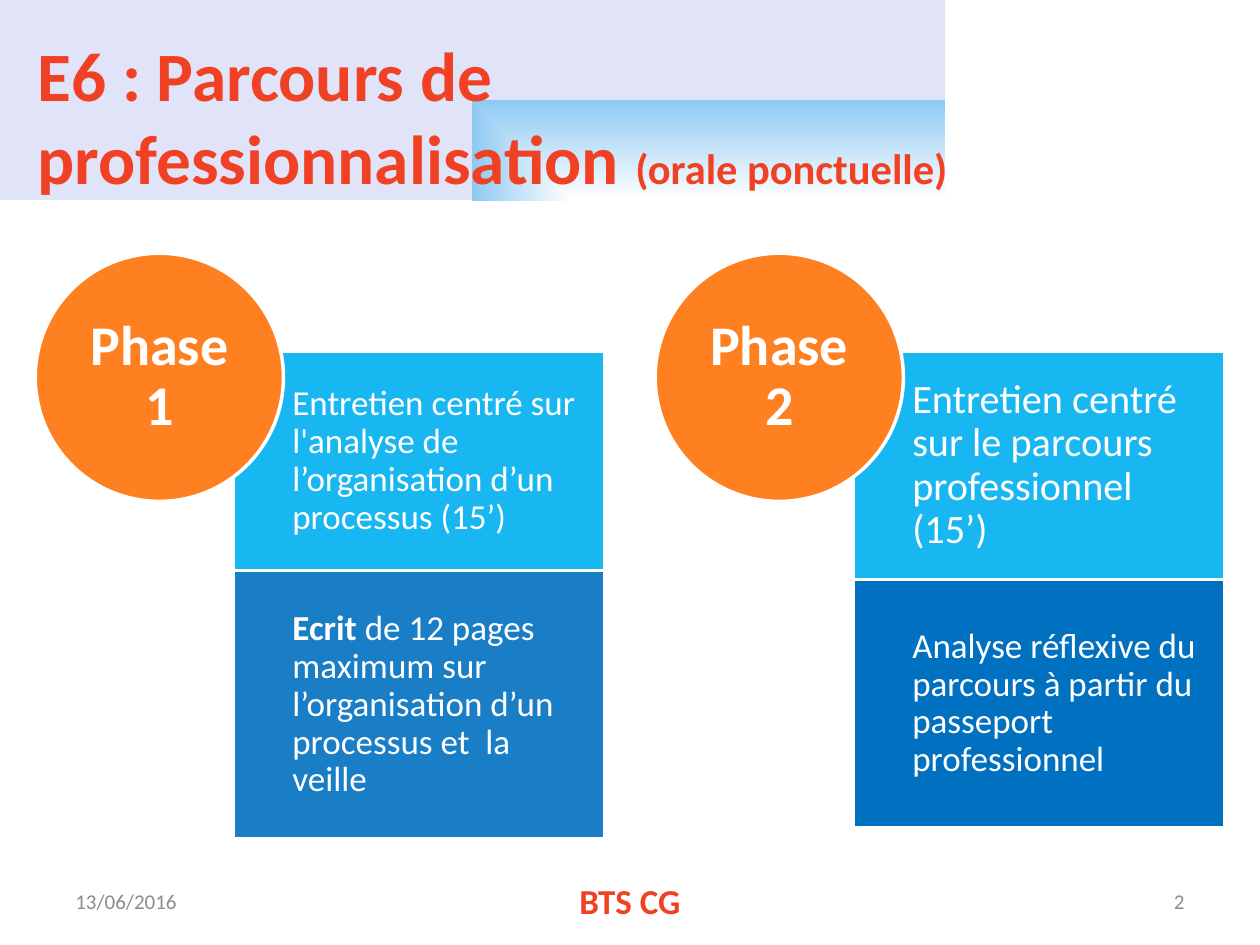
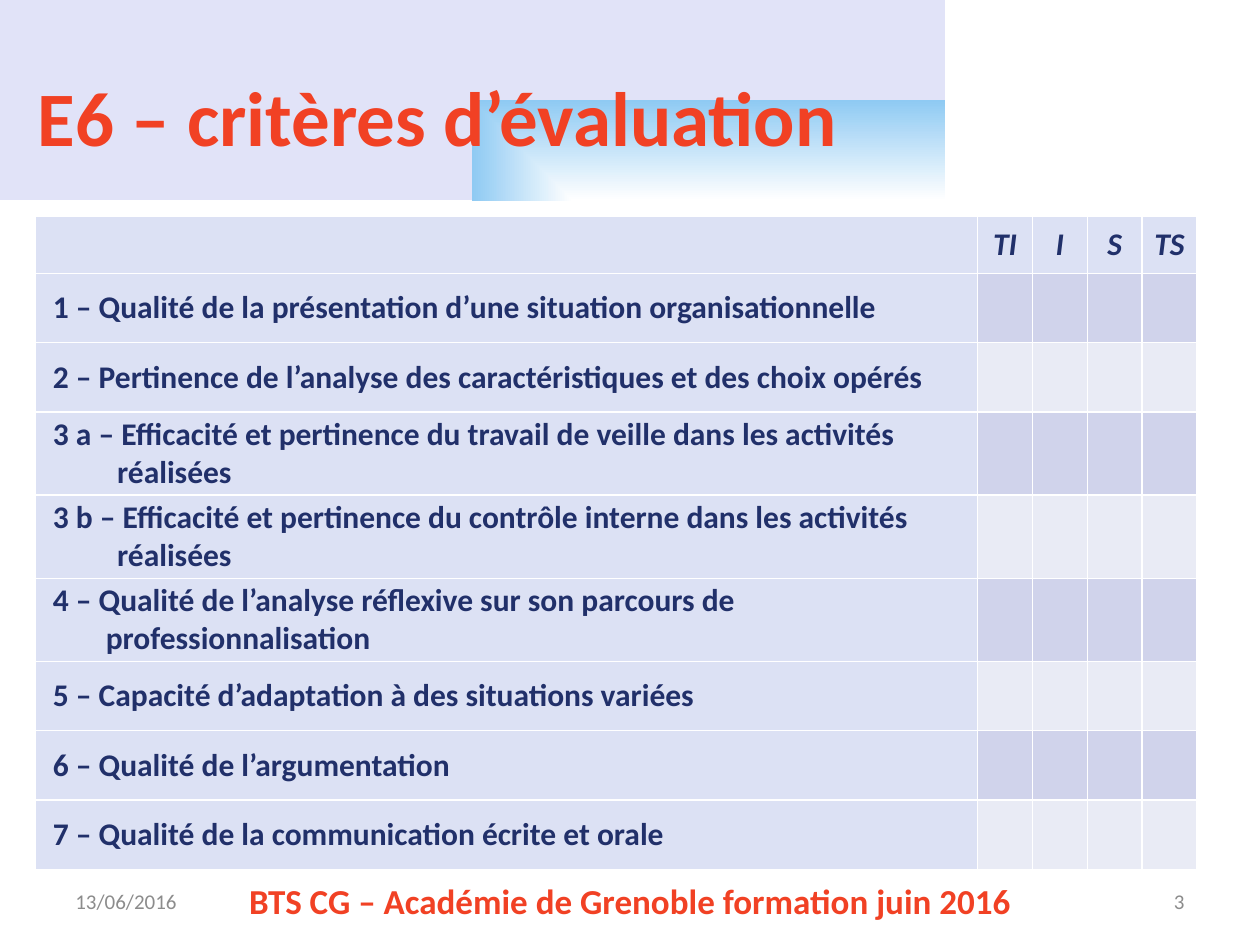
from lxml import etree
from pptx import Presentation
from pptx.dml.color import RGBColor
from pptx.enum.shapes import MSO_SHAPE as SHAPE
from pptx.enum.text import MSO_ANCHOR as ANCHOR, PP_ALIGN as ALIGN
from pptx.oxml import parse_xml
from pptx.oxml.ns import nsdecls, qn
from pptx.util import Inches, Pt

FONT = "Calibri"
RED, WHITE, GREY, NAVY = "F14124", "FFFFFF", "8C8C8C", "21306A"
ORANGE, SKY, BLUE = "FF8021", "00B0F0", "0070C0"
LABEL, ODD, EVEN = "DCE1F4", "D0D3EB", "E9EBF5"
BAND_STOPS = [(0, WHITE), (100, "8FCAF3"), (100, "C1C7F2"), (100, "E1E3F8")]
DATE = "13/06/2016"

PHASES = [
    ("Phase 1", [
        (1.74, SKY, 90, [("Entretien centré sur l'analyse de l’organisation d’un processus (15’)", 20, False)]),
        (2.13, BLUE, 90, [("Ecrit ", 20, True),
                          ("de 12 pages maximum sur l’organisation d’un processus et  la veille", 20, False)]),
    ]),
    ("Phase 2", [
        (1.81, SKY, 90, [("Entretien centré sur le parcours professionnel (15’)", 23, False)]),
        (1.97, BLUE, 100, [("Analyse réflexive du parcours à partir du passeport professionnel", 20, False)]),
    ]),
]

LEVELS = ["TI", "I", "S", "TS"]
CRITERIA = [
    ("1 – Qualité de la présentation d’une situation organisationnelle", 0.55, 0.42),
    ("2 – Pertinence de l’analyse des caractéristiques et des choix opérés", 0.55, 0.42),
    ("3 a – Efficacité et pertinence du travail de veille dans les activités réalisées", 0.66, 0.51),
    ("3 b – Efficacité et pertinence du contrôle interne dans les activités réalisées", 0.66, 0.51),
    ("4 – Qualité de l’analyse réflexive sur son parcours de professionnalisation", 0.66, 0.42),
    ("5 – Capacité d’adaptation à des situations variées", 0.55, 0.42),
    ("6 – Qualité de l’argumentation", 0.55, 0.42),
    ("7 – Qualité de la communication écrite et orale", 0.55, 0.42),
]


def rgb(value):
    """Turn a hex string into a colour."""
    return RGBColor.from_string(value)


def write(tf, parts, color, align=ALIGN.LEFT, spacing=None):
    """Fill a text frame with one paragraph of (text, size, bold) parts."""
    tf.word_wrap = True
    tf.vertical_anchor = ANCHOR.MIDDLE
    p = tf.paragraphs[0]
    p.alignment = align
    p.line_spacing = spacing
    for text, size, bold in parts:
        start = len(p.runs)
        if start:
            p.add_run().text = text
        else:
            p.text = text
        for r in p.runs[start:]:
            r.font.name, r.font.size, r.font.bold = FONT, Pt(size), bold
            r.font.color.rgb = rgb(color)
    return p


def add_text(s, box, parts, color, align=ALIGN.LEFT):
    """Add a text box at (left, top, width, height)."""
    tb = s.shapes.add_textbox(*map(Inches, box))
    write(tb.text_frame, parts, color, align)


def set_margins(tf, left, top, right, bottom):
    """Set the four text margins in inches."""
    tf.margin_left, tf.margin_top = Inches(left), Inches(top)
    tf.margin_right, tf.margin_bottom = Inches(right), Inches(bottom)


def add_filled(s, kind, box, fill, alpha=100):
    """Add a filled shape with a white outline."""
    sp = s.shapes.add_shape(kind, *map(Inches, box))
    sp.shadow.inherit = False
    sp.fill.solid()
    sp.fill.fore_color.rgb = rgb(fill)
    sp.line.color.rgb = rgb(WHITE)
    sp.line.width = Pt(2)
    if alpha < 100:
        color = sp.fill._xPr.find(qn("a:solidFill"))[0]
        etree.SubElement(color, qn("a:alpha")).set("val", str(alpha * 1000))
    return sp


def add_band(s):
    """Draw the gradient band behind the title."""
    sp = s.shapes.add_shape(SHAPE.RECTANGLE, 0, 0, Inches(7.5), Inches(1.59))
    sp.shadow.inherit = False
    sp.line.fill.background()
    sp.fill.background()
    stops = "".join(f'<a:gs pos="{pos * 1000}"><a:srgbClr val="{color}"/></a:gs>'
                    for pos, color in BAND_STOPS)
    gradient = parse_xml(
        f'<a:gradFill {nsdecls("a")} rotWithShape="1"><a:gsLst>{stops}</a:gsLst>'
        '<a:path path="rect"><a:fillToRect l="100000" t="100000"/></a:path></a:gradFill>')
    props = sp._element.spPr
    props.replace(props.find(qn("a:noFill")), gradient)


def add_frame(prs, title, footer, footer_width, number):
    """Add a slide with the shared band, title and footer."""
    s = prs.slides.add_slide(prs.slide_layouts[6])
    add_band(s)
    add_text(s, (0.2, 0.29, 9, 1.25), title, RED)
    add_text(s, (0.5, 6.95, 2.33, 0.4), [(DATE, 12, False)], GREY)
    add_text(s, (5 - footer_width / 2, 6.95, footer_width, 0.4),
             [(footer, 20, True)], RED, ALIGN.CENTER)
    add_text(s, (7.17, 6.95, 2.33, 0.4), [(number, 12, False)], GREY, ALIGN.RIGHT)
    return s


def add_phase(s, left, top, name, panels):
    """Stack the panels of a phase and overlap them with its disc."""
    y = top + 0.78
    for height, fill, alpha, parts in panels:
        sp = add_filled(s, SHAPE.RECTANGLE, (left + 1.57, y, 2.95, height), fill, alpha)
        set_margins(sp.text_frame, 0.47, 0.16, 0.16, 0.16)
        write(sp.text_frame, parts, WHITE, spacing=0.9)
        y += height
    disc = add_filled(s, SHAPE.OVAL, (left, top, 1.97, 1.97), ORANGE)
    set_margins(disc.text_frame, 0, 0, 0, 0)
    write(disc.text_frame, [(name, 32, True)], WHITE, ALIGN.CENTER, 0.9)


def fill_cell(cell, fill, text="", align=ALIGN.LEFT):
    """Colour a table cell and write its text."""
    cell.fill.solid()
    cell.fill.fore_color.rgb = rgb(fill)
    cell.vertical_anchor = ANCHOR.MIDDLE
    set_margins(cell, 0.07, 0, 0.07, 0)
    p = cell.text_frame.paragraphs[0]
    p.text = text
    p.alignment = align
    for r in p.runs:
        r.font.name, r.font.size, r.font.bold = FONT, Pt(18), True
        r.font.italic = align == ALIGN.CENTER
        r.font.color.rgb = rgb(NAVY)
    return p


def add_criteria(s, left, top):
    """Draw the evaluation grid."""
    widths = [7.48] + [0.435] * len(LEVELS)
    heights = [0.45] + [height for _, height, _ in CRITERIA]
    table = s.shapes.add_table(len(heights), len(widths), Inches(left), Inches(top),
                               Inches(sum(widths)), Inches(sum(heights))).table
    for column, width in zip(table.columns, widths):
        column.width = Inches(width)
    for row, height in zip(table.rows, heights):
        row.height = Inches(height)
    fill_cell(table.cell(0, 0), LABEL)
    for j, level in enumerate(LEVELS, 1):
        fill_cell(table.cell(0, j), LABEL, level, ALIGN.CENTER)
    for i, (text, _, hang) in enumerate(CRITERIA, 1):
        p = fill_cell(table.cell(i, 0), LABEL, text)
        props = p._p.get_or_add_pPr()
        props.set("marL", str(Inches(hang + 0.07)))
        props.set("indent", str(-Inches(hang)))
        for j in range(1, len(widths)):
            fill_cell(table.cell(i, j), ODD if i % 2 else EVEN)


def build_phases(prs):
    """Build the slide of the two phases."""
    title = [("E6 : Parcours de \vprofessionnalisation ", 39.6, True), ("(orale ponctuelle)", 24.3, True)]
    s = add_frame(prs, title, "BTS CG", 3.17, "2")
    for i, (name, panels) in enumerate(PHASES):
        add_phase(s, 0.28 + i * 4.92, 2.01, name, panels)


def build_criteria(prs):
    """Build the slide of the evaluation criteria."""
    s = add_frame(prs, [("E6 – critères d’évaluation", 44, True)],
                  "BTS CG – Académie de Grenoble formation juin 2016", 7.09, "3")
    add_criteria(s, 0.28, 1.72)


def main():
    """Build and save the presentation."""
    prs = Presentation()
    prs.slide_width, prs.slide_height = Inches(10), Inches(7.5)
    build_phases(prs)
    build_criteria(prs)
    prs.save("out.pptx")


if __name__ == "__main__":
    main()
